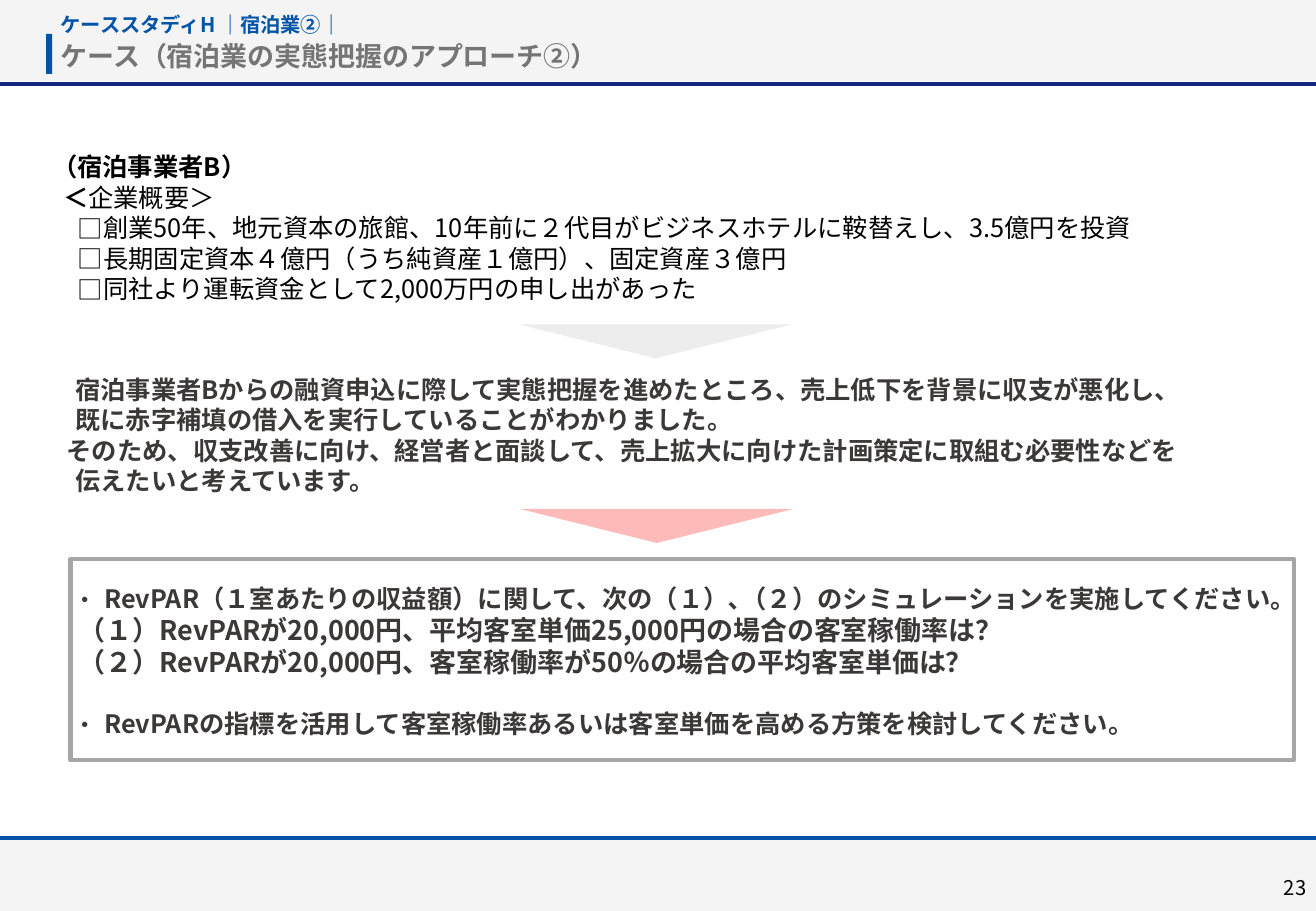
from dataclasses import dataclass

from lxml import etree
from pptx import Presentation
from pptx import util as u
from pptx.dml.color import RGBColor
from pptx.enum import shapes, text
from pptx.oxml.ns import qn

SCALE = 9144


@dataclass(frozen=True)
class Theme:
    font: str = "Noto Sans CJK JP"
    black: str = "000000"
    body: str = "3B3838"
    blue: str = "0053A6"
    navy: str = "15267E"
    band: str = "EBEBEB"
    frame: str = "A6A6A6"
    gray: str = "BFBFBF"
    red: str = "FF0000"
    small: int = 12
    normal: int = 15
    large: int = 16
    rule: float = 2.25
    border: float = 2.5


@dataclass(frozen=True)
class Line:
    spans: tuple
    size: int = 15
    indent: int = 0
    bullet: str = ""
    hang: int = 0
    before: int = 0


THEME = Theme()


def px(length):
    return u.Emu(length * SCALE)


def place(shape, left, top, width, height):
    shape.left, shape.top = px(left), px(top)
    shape.width, shape.height = px(width), px(height)


def add_span(para, words, size, color, bold):
    span = para.add_run()
    span.text = words
    font = span.font
    font.size, font.bold, font.name = u.Pt(size), bold, THEME.font
    font.color.rgb = RGBColor.from_string(color)
    east_asian = etree.SubElement(span._r.get_or_add_rPr(), qn("a:ea"))
    east_asian.set("typeface", THEME.font)


def set_indent(para, line):
    properties = para._p.get_or_add_pPr()
    properties.set("marL", str(px(line.indent + line.hang)))
    properties.set("indent", str(px(-line.hang)))
    if line.bullet:
        etree.SubElement(properties, qn("a:buFont")).set("typeface", THEME.font)
        etree.SubElement(properties, qn("a:buChar")).set("char", line.bullet)
    if line.before:
        para.space_before = u.Pt(line.before)


def add_text(page, area, lines, color):
    box = page.shapes.add_textbox(*map(px, area))
    frame = box.text_frame
    frame.word_wrap = True
    for number, line in enumerate(lines):
        para = frame.add_paragraph() if number else frame.paragraphs[0]
        set_indent(para, line)
        for words, bold in line.spans:
            add_span(para, words, line.size, color, bold)
    return box


def format_heading(box, area, words, size, color):
    place(box, *area)
    frame = box.text_frame
    frame.word_wrap = True
    frame.auto_size = text.MSO_AUTO_SIZE.NONE
    frame.vertical_anchor = text.MSO_ANCHOR.MIDDLE
    frame.margin_left = frame.margin_right = 0
    frame.margin_top = frame.margin_bottom = 0
    para = frame.paragraphs[0]
    para.alignment = text.PP_ALIGN.LEFT
    para.line_spacing = 0.9
    para.space_before = u.Pt(0)
    add_span(para, words, size, color, True)


def add_block(page, kind, area, fill=None, alpha=100, border=None):
    block = page.shapes.add_shape(kind, *map(px, area))
    block.shadow.inherit = False
    if fill:
        block.fill.solid()
        block.fill.fore_color.rgb = RGBColor.from_string(fill)
        tint = block._element.spPr.find(".//" + qn("a:srgbClr"))
        etree.SubElement(tint, qn("a:alpha")).set("val", str(alpha * 1000))
    else:
        block.fill.background()
    if border:
        block.line.color.rgb = RGBColor.from_string(border)
        block.line.width = u.Pt(THEME.border)
    else:
        block.line.fill.background()
    return block


def add_rule(page, top, color):
    rule = page.shapes.add_connector(
        shapes.MSO_CONNECTOR.STRAIGHT, px(0), px(top), px(1083), px(top))
    rule.line.color.rgb = RGBColor.from_string(color)
    rule.line.width = u.Pt(THEME.rule)
    etree.SubElement(rule._element.spPr, qn("a:effectLst"))


def add_down_arrow(page, left, top, color):
    arrow = add_block(page, shapes.MSO_SHAPE.ISOSCELES_TRIANGLE,
                      (left, top, 225, 28), color, 27)
    arrow.rotation = 180


def add_bands(page):
    rectangle = shapes.MSO_SHAPE.RECTANGLE
    add_block(page, rectangle, (0, 0, 1083, 67), THEME.band, 50)
    add_block(page, rectangle, (0, 690, 1083, 60), THEME.band, 50)
    add_rule(page, 69, THEME.navy)
    add_rule(page, 690, THEME.blue)
    add_block(page, rectangle, (38, 28, 5, 33), THEME.blue)


def add_headings(page):
    format_heading(page.shapes.title, (50, 31, 926, 33),
                   "ケース（宿泊業の実態把握のアプローチ②）", THEME.large, THEME.black)
    kicker = page.shapes.add_textbox(0, 0, 0, 0)
    format_heading(kicker, (50, 10, 926, 22),
                   "ケーススタディH ｜宿泊業②｜", THEME.small, THEME.blue)


def add_profile(page):
    facts = (
        "創業50年、地元資本の旅館、10年前に２代目がビジネスホテルに鞍替えし、3.5億円を投資",
        "長期固定資本４億円（うち純資産１億円）、固定資産３億円",
        "同社より運転資金として2,000万円の申し出があった",
    )
    lines = [
        Line((("（宿泊事業者B）", True),)),
        Line((("＜", True), ("企業概要＞", False)), indent=9),
    ]
    lines += [Line(((fact, False),), indent=21, bullet="□", hang=21)
              for fact in facts]
    add_text(page, (33, 120, 1042, 136), lines, THEME.black)


def add_situation(page):
    sentences = (
        (30, "宿泊事業者Bからの融資申込に際して実態把握を進めたところ、売上低下を背景に収支が悪化し、"),
        (30, "既に赤字補填の借入を実行していることがわかりました。"),
        (23, "そのため、収支改善に向け、経営者と面談して、売上拡大に向けた計画策定に取組む必要性などを"),
        (30, "伝えたいと考えています。"),
    )
    lines = [Line(((words, True),), indent=indent) for indent, words in sentences]
    add_text(page, (22, 303, 1042, 111), lines, THEME.body)


def add_tasks(page):
    tasks = (
        "RevPAR（１室あたりの収益額）に関して、次の（１）､（２）のシミュレーションを実施してください。",
        "RevPARの指標を活用して客室稼働率あるいは客室単価を高める方策を検討してください。",
    )
    cases = (
        "（１）RevPARが20,000円、平均客室単価25,000円の場合の客室稼働率は？",
        "（２）RevPARが20,000円、客室稼働率が50％の場合の平均客室単価は？",
    )
    first, last = (Line(((task, True),), bullet="・", hang=26, before=before)
                   for task, before in zip(tasks, (0, 18)))
    middle = [Line(((case, True),), THEME.large, indent=5) for case in cases]
    add_text(page, (50, 475, 1030, 140), [first, *middle, last], THEME.body)
    add_block(page, shapes.MSO_SHAPE.RECTANGLE, (58, 460, 1007, 166),
              border=THEME.frame)


def add_page_number(page):
    box = add_text(page, (841, 711, 242, 40),
                   [Line((("23", False),), THEME.small)], THEME.black)
    box.text_frame.vertical_anchor = text.MSO_ANCHOR.MIDDLE
    box.text_frame.margin_right = px(8)
    box.text_frame.paragraphs[0].alignment = text.PP_ALIGN.RIGHT


def main():
    deck = Presentation()
    deck.slide_width, deck.slide_height = px(1083), px(750)
    page = deck.slides.add_slide(deck.slide_layouts.get_by_name("Title Only"))
    add_bands(page)
    add_headings(page)
    add_profile(page)
    add_down_arrow(page, 427, 267, THEME.gray)
    add_situation(page)
    add_down_arrow(page, 428, 419, THEME.red)
    add_tasks(page)
    add_page_number(page)
    deck.save("out.pptx")


if __name__ == "__main__":
    main()
